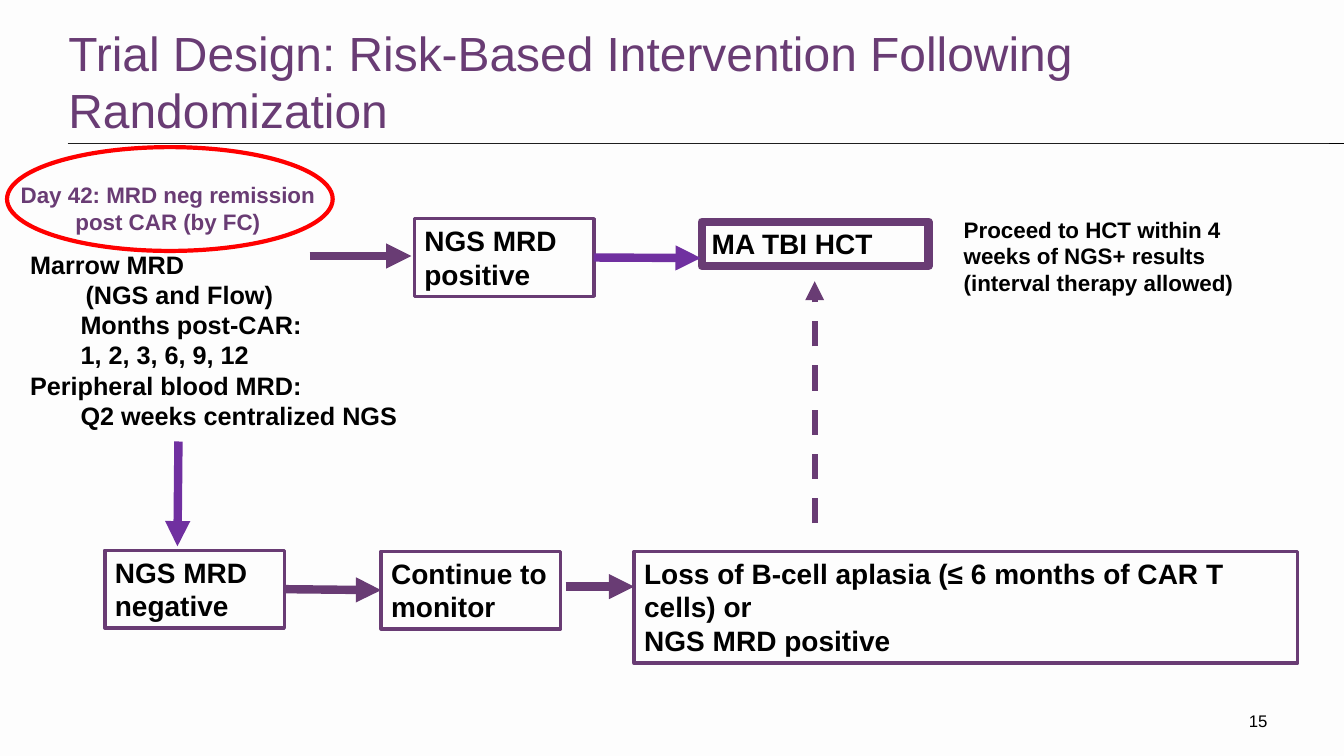
from pptx import Presentation
from pptx import util as u
from pptx.dml.color import RGBColor
from pptx.enum import dml, shapes, text
from pptx.oxml.ns import qn
from lxml import etree

COLORS = {"back": "FDFDFD", "plum": "693C74", "violet": "7030A0",
          "red": "FF0000", "black": "000000"}
KIND = shapes.MSO_SHAPE
ALIGN = text.PP_ALIGN
ANCHOR = text.MSO_ANCHOR

deck = Presentation()
deck.slide_width = u.Inches(13.33)
deck.slide_height = u.Inches(7.5)
slide = deck.slides.add_slide(deck.slide_layouts[6])
slide.background.fill.solid()
slide.background.fill.fore_color.rgb = RGBColor.from_string(COLORS["back"])


def write(shape, lines, size, color="black", bold=True, align=ALIGN.LEFT,
          anchor=ANCHOR.TOP, wrap=True):
    frame = shape.text_frame
    for name, value in {"word_wrap": wrap, "vertical_anchor": anchor}.items():
        setattr(frame, name, value)
    for i, (line, indent) in enumerate(lines):
        para = frame.paragraphs[0] if i == 0 else frame.add_paragraph()
        para.alignment = align
        if indent:
            props = para._p.get_or_add_pPr()
            props.set("marL", str(u.Inches(indent)))
            props.set("indent", "0")
        run = para.add_run()
        run.text = line
        style = {"name": "Arial", "size": u.Pt(size), "bold": bold}
        for name, value in style.items():
            setattr(run.font, name, value)
        run.font.color.rgb = RGBColor.from_string(COLORS[color])


def link(start, end, color, width, arrow=True):
    line = slide.shapes.add_connector(
        shapes.MSO_CONNECTOR.STRAIGHT, *[u.Inches(n) for n in start + end])
    line.line.color.rgb = RGBColor.from_string(COLORS[color])
    line.line.width = u.Pt(width)
    if arrow:
        etree.SubElement(line.line._get_or_add_ln(), qn("a:tailEnd"), type="triangle")
    etree.SubElement(line._element.spPr, qn("a:effectLst"))
    return line


link((0.67, 1.42), (13.33, 1.42), "black", 0.75, False)

title = slide.shapes.add_shape(
    KIND.RECTANGLE, *[u.Inches(n) for n in (0.58, 0.17, 12.6, 1.25)])
title.shadow.inherit = False
title.fill.solid()
title.fill.fore_color.rgb = RGBColor.from_string(COLORS["back"])
title.line.fill.background()
write(title, [("Trial Design: Risk-Based Intervention Following Randomization", 0)],
      34.2, "plum", False, anchor=ANCHOR.BOTTOM)

nodes = {}
for key, place, width, lines in [
    ("neg", (1.04, 5.46, 1.78, 0.77), 2.5, ["NGS MRD negative"]),
    ("watch", (3.78, 5.47, 1.78, 0.77), 2.5, ["Continue to monitor"]),
    ("loss", (6.29, 5.47, 6.58, 1.11), 2.5,
     ["Loss of B-cell aplasia (≤ 6 months of CAR T cells) or", "NGS MRD positive"]),
    ("transplant", (6.96, 2.2, 2.25, 0.44), 6, ["MA TBI HCT"]),
    ("pos", (4.11, 2.17, 1.78, 0.77), 2.5, ["NGS MRD positive"]),
]:
    box = slide.shapes.add_shape(KIND.RECTANGLE, *[u.Inches(n) for n in place])
    box.shadow.inherit = False
    box.fill.background()
    box.line.color.rgb = RGBColor.from_string(COLORS["plum"])
    box.line.width = u.Pt(width)
    write(box, [(line, 0) for line in lines], 20)
    nodes[key] = box

step = link((2.82, 5.85), (3.78, 5.85), "plum", 6)
step.begin_connect(nodes["neg"], 3)
step.end_connect(nodes["watch"], 1)
treat = link((5.89, 2.56), (6.95, 2.56), "violet", 6)
treat.begin_connect(nodes["pos"], 3)
link((5.61, 5.82), (6.29, 5.82), "plum", 6)
link((1.77, 4.38), (1.76, 5.42), "violet", 6)
link((3.07, 2.54), (4.08, 2.54), "plum", 6)
rescue = link((8.08, 5.19), (8.08, 2.79), "plum", 4.5)
rescue.line.dash_style = dml.MSO_LINE.DASH

for place, lines, size, style in [
    ((0.02, 1.75, 3.29, 0.64),
     [("Day 42: MRD neg remission post CAR (by FC)", 0)], 16,
     {"color": "plum", "align": ALIGN.CENTER}),
    ((0.2, 2.42, 3.88, 2.22),
     [("Marrow MRD", 0), ("(NGS and Flow)", 0.55), ("Months post-CAR:", 0.5),
      ("1, 2, 3, 6, 9, 12", 0.5), ("Peripheral blood MRD:", 0),
      ("Q2 weeks centralized NGS", 0.5)], 18, {"wrap": False}),
    ((9.46, 2.09, 3.29, 0.91),
     [("Proceed to HCT within 4 weeks of NGS+ results", 0),
      ("(interval therapy allowed)", 0)], 16, {}),
    ((12, 6.95, 0.67, 0.4), [("15", 0)], 12,
     {"bold": False, "align": ALIGN.RIGHT, "anchor": ANCHOR.MIDDLE}),
]:
    note = slide.shapes.add_textbox(*[u.Inches(n) for n in place])
    write(note, lines, size, **style)

ring = slide.shapes.add_shape(
    KIND.OVAL, *[u.Inches(n) for n in (0.07, 1.46, 3.23, 1.03)])
ring.shadow.inherit = False
ring.fill.background()
ring.line.color.rgb = RGBColor.from_string(COLORS["red"])
ring.line.width = u.Pt(3)

deck.save("out.pptx")
